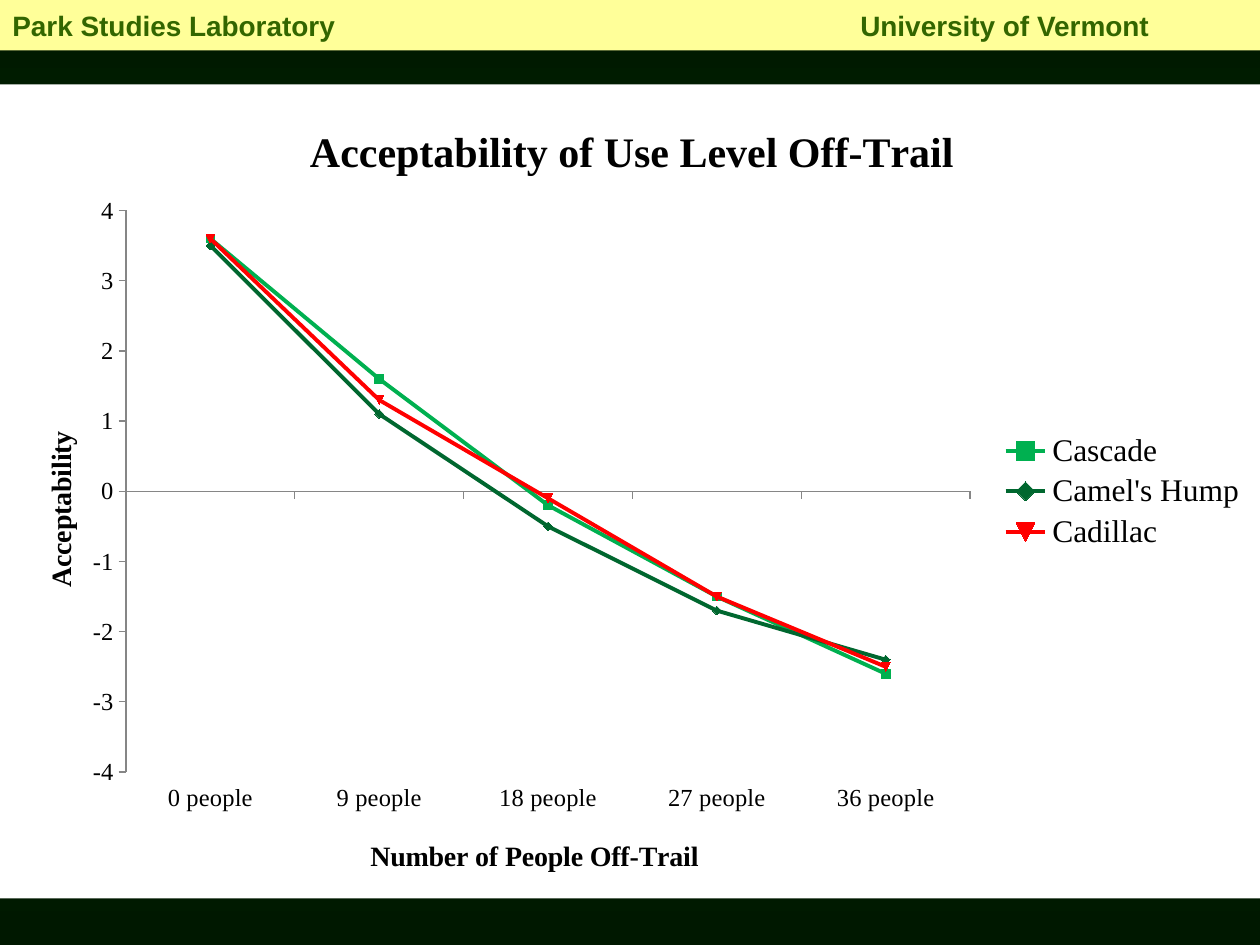
from lxml import etree
from pptx import Presentation
from pptx import util as u
from pptx.chart.data import CategoryChartData
from pptx.dml.color import RGBColor
from pptx.enum import chart as ch, shapes, text
from pptx.oxml import parse_xml
from pptx.oxml.ns import nsdecls, qn

COLORS = {
    "edge": "001800", "middle": "003300", "band": "FFFF99", "heading": "336600",
    "paper": "FFFFFF", "ink": "000000", "axis": "868686",
    "cascade": "00B050", "camel": "00672F", "cadillac": "FF0000",
}
LEVELS = [f"{count} people" for count in range(0, 37, 9)]
PARKS = [
    ("Cascade", "cascade", (3.6, 1.6, -0.2, -1.5, -2.6)),
    ("Camel's Hump", "camel", (3.5, 1.1, -0.5, -1.7, -2.4)),
    ("Cadillac", "cadillac", (3.6, 1.3, -0.1, -1.5, -2.5)),
]


def rgb(name):
    return RGBColor.from_string(COLORS[name])


def layout_xml(**places):
    inner = '<c:layoutTarget val="inner"/>' if "w" in places else ""
    modes = "".join(f'<c:{key}Mode val="edge"/>' for key in "xy")
    values = "".join(f'<c:{key} val="{value}"/>' for key, value in places.items())
    return parse_xml(
        f'<c:layout {nsdecls("c")}><c:manualLayout>{inner}{modes}{values}'
        "</c:manualLayout></c:layout>")


class Deck:
    def __init__(self, width, height):
        self.prs = Presentation()
        self.prs.slide_width = u.Inches(width)
        self.prs.slide_height = u.Inches(height)
        self.slide = self.prs.slides.add_slide(self.prs.slide_layouts[6])

    def background(self, stops):
        fill = self.slide.background.fill
        fill.gradient()
        fill.gradient_angle = 90
        gradient = self.slide.element.find(".//" + qn("a:gsLst"))
        for stop in list(gradient):
            gradient.remove(stop)
        for position, color in stops:
            stop = etree.SubElement(gradient, qn("a:gs"), pos=str(position * 1000))
            etree.SubElement(stop, qn("a:srgbClr"), val=COLORS[color])

    def header(self, box, wording, tab):
        band = self.slide.shapes.add_shape(
            shapes.MSO_SHAPE.RECTANGLE, *map(u.Inches, box))
        band.shadow.inherit = False
        band.fill.solid()
        band.fill.fore_color.rgb = rgb("band")
        band.line.fill.background()
        frame = band.text_frame
        frame.vertical_anchor = text.MSO_ANCHOR.MIDDLE
        frame.text = wording
        line = frame.paragraphs[0]
        line.alignment = text.PP_ALIGN.LEFT
        for run in line.runs:
            self.style(run.font, 16, "heading", "Arial", True)
        tabs = etree.SubElement(line._p.get_or_add_pPr(), qn("a:tabLst"))
        etree.SubElement(tabs, qn("a:tab"), pos=str(u.Inches(tab)), algn="l")

    def style(self, font, size, color="ink", name="Times New Roman", bold=False):
        font.size = u.Pt(size)
        font.name = name
        font.bold = bold
        font.color.rgb = rgb(color)

    def title(self, owner, wording, size, x, y):
        owner.has_title = True
        heading = owner.chart_title if hasattr(owner, "chart_title") else owner.axis_title
        heading.text_frame.text = wording
        for run in heading.text_frame.paragraphs[0].runs:
            self.style(run.font, size, bold=True)
        element = heading._element
        for old in element.findall(qn("c:layout")):
            element.remove(old)
        element.find(qn("c:tx")).addnext(layout_xml(x=x, y=y))

    def axis(self, axis):
        axis.has_major_gridlines = False
        axis.major_tick_mark = ch.XL_TICK_MARK.OUTSIDE
        axis.minor_tick_mark = ch.XL_TICK_MARK.NONE
        axis.format.line.color.rgb = rgb("axis")
        axis.format.line.width = u.Pt(0.75)
        self.style(axis.tick_labels.font, 14)

    def line_chart(self, box, levels, parks):
        data = CategoryChartData(number_format="General")
        data.categories = levels
        for park, _, ratings in parks:
            data.add_series(park, ratings)
        chart = self.slide.shapes.add_chart(
            ch.XL_CHART_TYPE.LINE_MARKERS, *map(u.Inches, box), data).chart
        self.style(chart.font, 10)
        self.title(chart, "Acceptability of Use Level Off-Trail", 24, 0.24, 0.04)
        chart.chart_title.include_in_layout = False

        people, rating = chart.category_axis, chart.value_axis
        self.axis(people)
        people.tick_label_position = ch.XL_TICK_LABEL_POSITION.LOW
        self.title(people, "Number of People Off-Trail", 16, 0.29, 0.92)
        self.axis(rating)
        rating.minimum_scale, rating.maximum_scale, rating.major_unit = -4, 4, 1
        self.title(rating, "Acceptability", 16, 0.03, 0.42)

        chart.has_legend = True
        chart.legend.position = ch.XL_LEGEND_POSITION.RIGHT
        chart.legend.include_in_layout = False
        self.style(chart.legend.font, 18)

        plot = chart.plots[0]
        plot.vary_by_categories = False
        for series, (_, color, _) in zip(plot.series, parks):
            series.smooth = False
            series.format.line.color.rgb = rgb(color)
            series.format.line.width = u.Pt(2.25)
            marker = series.marker
            marker.style = ch.XL_MARKER_STYLE.AUTOMATIC
            marker.size = 5
            marker.format.fill.solid()
            marker.format.fill.fore_color.rgb = rgb(color)
            marker.format.line.color.rgb = rgb(color)

        space = chart._chartSpace
        area = space.find(".//" + qn("c:plotArea"))
        for old in area.findall(qn("c:layout")):
            area.remove(old)
        area.insert(0, layout_xml(x=0.1, y=0.155, w=0.67, h=0.69))
        space.find(qn("c:chart")).addnext(parse_xml(
            f'<c:spPr {nsdecls("c", "a")}><a:solidFill><a:srgbClr val="{COLORS["paper"]}"/>'
            "</a:solidFill><a:ln><a:noFill/></a:ln></c:spPr>"))


def main():
    deck = Deck(10, 7.5)
    deck.background([(0, "edge"), (50, "middle"), (100, "edge")])
    deck.line_chart((0, 0.67, 10, 6.46), LEVELS, PARKS)
    deck.header((0, 0, 10, 0.4), "Park Studies Laboratory\tUniversity of Vermont", 6.73)
    deck.prs.save("out.pptx")


if __name__ == "__main__":
    main()
